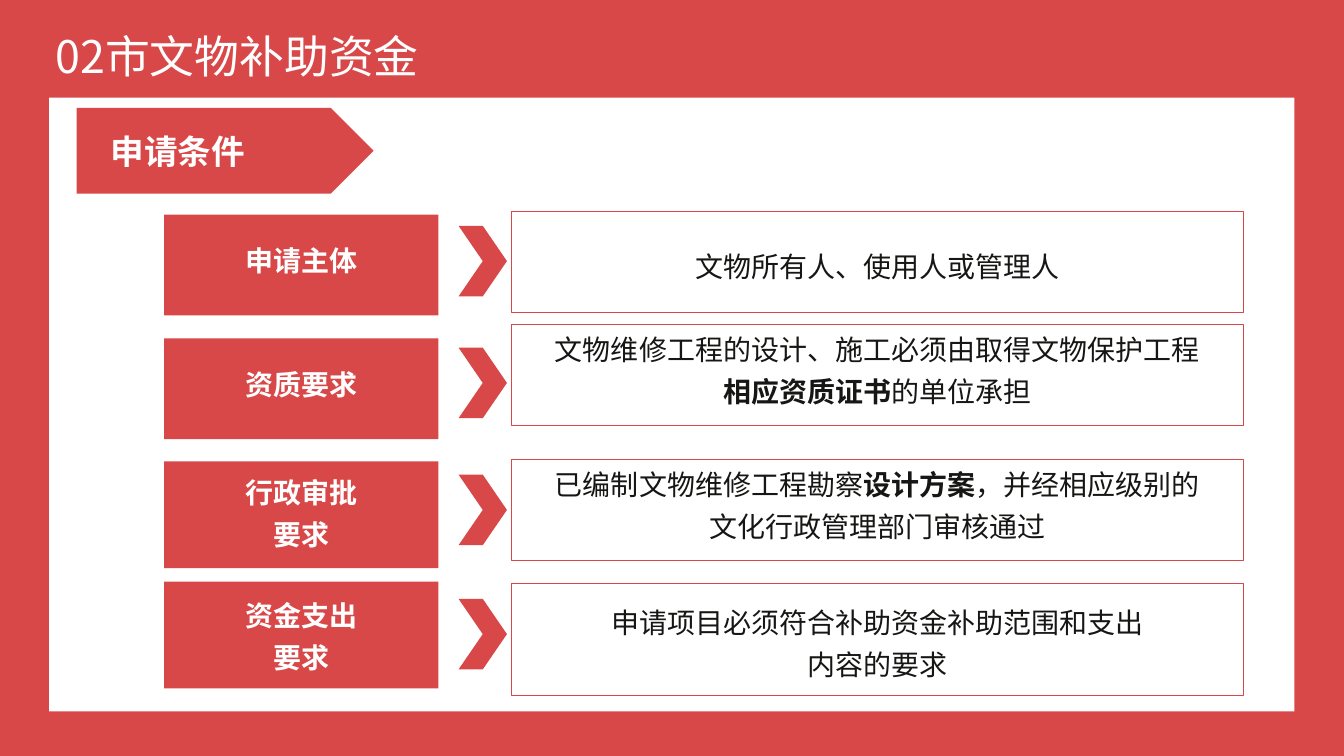
from pptx import Presentation
from pptx.dml.color import RGBColor
from pptx.enum.shapes import MSO_SHAPE
from pptx.enum.text import MSO_ANCHOR, PP_ALIGN
from pptx.oxml.ns import qn
from pptx.util import Cm, Pt
from lxml.etree import SubElement
from dataclasses import dataclass

# Content: lines hold (text, bold) runs
TITLE = "02市文物补助资金"
SECTION = "申请条件"
CONDITIONS = [
    dict(label=["申请主体"],
         detail=[[("文物所有人、使用人或管理人", False)]]),
    dict(label=["资质要求"],
         detail=[[("文物维修工程的设计、施工必须由取得文物保护工程", False)],
                 [("相应资质证书", True), ("的单位承担", False)]]),
    dict(label=["行政审批", "要求"],
         detail=[[("已编制文物维修工程勘察", False), ("设计方案", True),
                  ("，并经相应级别的", False)],
                 [("文化行政管理部门审核通过", False)]]),
    dict(label=["资金支出", "要求"],
         detail=[[("申请项目必须符合补助资金补助范围和支出", False)],
                 [("内容的要求", False)]]),
]

# Vertical layout of each row in cm: (top, height, text inset), chevron top
LABEL_BOXES = [(5.41, 2.54, 0.52), (8.53, 2.54, 0.52),
               (11.63, 2.69, 0.14), (14.66, 2.69, 0.22)]
DETAIL_BOXES = [(5.33, 2.54, 0.74), (8.18, 2.54, 0),
                (11.58, 2.54, 0), (14.71, 2.82, 0.34)]
CHEVRON_TOPS = [5.69, 8.76, 11.96, 15.09]


@dataclass(frozen=True)
class Theme:
    red: RGBColor = RGBColor(0xD9, 0x48, 0x48)
    white: RGBColor = RGBColor(0xFF, 0xFF, 0xFF)
    ink: RGBColor = RGBColor(0x16, 0x16, 0x15)
    font: str = "Noto Sans CJK SC"
    title: Pt = Pt(32)
    section: Pt = Pt(24)
    body: Pt = Pt(20)
    leading: float = 1.25


theme = Theme()


def style_run(r, size, color, bold=False):
    r.font.name, r.font.size, r.font.bold = theme.font, size, bold
    r.font.color.rgb = color
    SubElement(r.font._element, qn("a:ea")).set("typeface", theme.font)


def add_box(slide, kind, left, top, width, height, fill=None, line=None):
    sp = slide.shapes.add_shape(kind, Cm(left), Cm(top), Cm(width), Cm(height))
    sp.shadow.inherit = False
    if fill is None:
        sp.fill.background()
    else:
        sp.fill.solid()
        sp.fill.fore_color.rgb = fill
    if line is None:
        sp.line.fill.background()
    else:
        sp.line.color.rgb = line
        sp.line.width = Pt(0.75)
    return sp


def write_lines(sp, lines, inset, color):
    tf = sp.text_frame
    tf.word_wrap = True
    tf.vertical_anchor = MSO_ANCHOR.TOP
    tf.margin_top, tf.margin_bottom = Cm(inset), 0
    for i, line in enumerate(lines):
        p = tf.paragraphs[0] if i == 0 else tf.add_paragraph()
        p.alignment = PP_ALIGN.CENTER
        p.line_spacing = theme.leading
        for text, bold in line:
            r = p.add_run()
            r.text = text
            style_run(r, theme.body, color, bold)


prs = Presentation()
prs.slide_width, prs.slide_height = Cm(33.88), Cm(19.05)
slide = prs.slides.add_slide(prs.slide_layouts[5])

# Red frame around a white panel
slide.background.fill.solid()
slide.background.fill.fore_color.rgb = theme.red
panel = add_box(slide, MSO_SHAPE.RECTANGLE, 1.24, 2.46, 31.39, 15.47, theme.white)

# Title
title = slide.shapes.title
title.left, title.top, title.width, title.height = Cm(1.14), Cm(0.74), Cm(12.6), Cm(1.7)
tf = title.text_frame
tf.text = TITLE
tf.vertical_anchor = MSO_ANCHOR.TOP
p = tf.paragraphs[0]
p.alignment, p.line_spacing = PP_ALIGN.LEFT, 0.9
style_run(p.runs[0], theme.title, theme.white)

# Section tag
tag = add_box(slide, MSO_SHAPE.PENTAGON, 1.93, 2.72, 7.49, 2.16, theme.red)
tf = tag.text_frame
tf.text = SECTION
tf.margin_left = Cm(0.86)
tf.vertical_anchor = MSO_ANCHOR.MIDDLE
tf.paragraphs[0].alignment = PP_ALIGN.LEFT
style_run(tf.paragraphs[0].runs[0], theme.section, theme.white, True)

# Condition rows: label, chevron, detail
for row, label_box, detail_box, chevron_top in zip(
        CONDITIONS, LABEL_BOXES, DETAIL_BOXES, CHEVRON_TOPS):
    top, height, inset = label_box
    label = add_box(slide, MSO_SHAPE.RECTANGLE, 4.14, top, 6.91, height, theme.red)
    write_lines(label, [[(text, True)] for text in row["label"]], inset, theme.white)

    add_box(slide, MSO_SHAPE.CHEVRON, 11.56, chevron_top, 1.22, 1.78, theme.red)

    top, height, inset = detail_box
    detail = add_box(slide, MSO_SHAPE.RECTANGLE, 12.9, top, 18.44, height, line=theme.red)
    write_lines(detail, row["detail"], inset, theme.ink)

prs.save("out.pptx")
